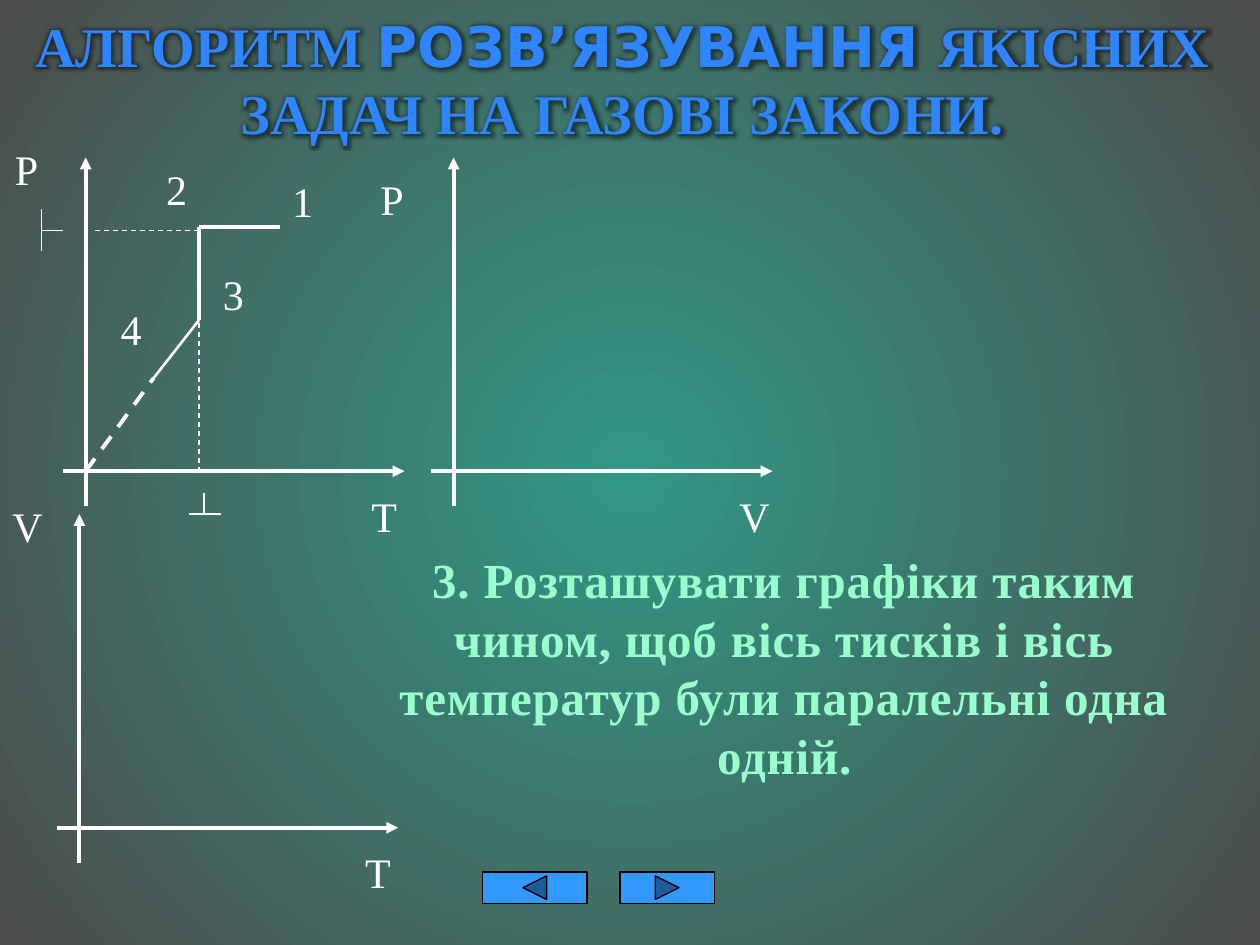
import pptx
import pptx.util
import pptx.dml.color
import pptx.enum.dml
import pptx.enum.shapes
import pptx.enum.text
import pptx.oxml
import pptx.oxml.ns
import lxml.etree

Inches = pptx.util.Inches
Pt = pptx.util.Pt
RGBColor = pptx.dml.color.RGBColor
SHAPE = pptx.enum.shapes.MSO_SHAPE
ALIGN = pptx.enum.text.PP_ALIGN
ANCHOR = pptx.enum.text.MSO_ANCHOR
DASH = pptx.enum.dml.MSO_LINE.DASH
qn = pptx.oxml.ns.qn

WHITE = RGBColor(0xFF, 0xFF, 0xFF)
BLACK = RGBColor(0, 0, 0)
TEAL = RGBColor(0x31, 0x98, 0x85)
GREY = RGBColor(0x4C, 0x4C, 0x4C)
BLUE = RGBColor(0x2F, 0x85, 0xFF)
MINT = RGBColor(0x99, 0xFF, 0xCC)
BUTTON = RGBColor(0x33, 0x99, 0xFF)
SERIF = "Times New Roman"
SANS = "DejaVu Sans"
NS = pptx.oxml.ns.nsdecls("a")


def style(run, size, color, bold=False, face=SERIF):
    font = run.font
    font.name = face
    font.size = Pt(size)
    font.bold = bold
    font.color.rgb = color


def paint(slide):
    fill = slide.background.fill
    fill.gradient()
    for stop, color in zip(fill.gradient_stops, (TEAL, GREY)):
        stop.color.rgb = color
    grad = slide.element.find(".//" + qn("a:gradFill"))
    grad.remove(grad.find(qn("a:lin")))
    grad.append(pptx.oxml.parse_xml(
        f'<a:path {NS} path="circle">'
        '<a:fillToRect l="50000" t="50000" r="50000" b="50000"/></a:path>'))


def line(slide, start, end, width, dash=False, arrow=False):
    link = slide.shapes.add_connector(
        pptx.enum.shapes.MSO_CONNECTOR.STRAIGHT,
        *(Inches(n) for n in (*start, *end)))
    link.line.color.rgb = WHITE
    link.line.width = Pt(width)
    if dash:
        link.line.dash_style = DASH.DASH
    if arrow:
        lxml.etree.SubElement(link.line._get_or_add_ln(),
                              qn("a:tailEnd"), type="triangle")
    lxml.etree.SubElement(link.element.spPr, qn("a:effectLst"))


def label(slide, text, left, top, width=0.5):
    box = slide.shapes.add_textbox(
        Inches(left), Inches(top), Inches(width), Inches(0.5))
    box.text_frame.word_wrap = True
    box.text_frame.text = text
    style(box.text_frame.paragraphs[0].runs[0], 24, WHITE)


def axes(slide, left, top, up, across, shift=-0.48, drop=-0.16):
    line(slide, (left + 0.18, top + 2.77), (left + 0.18, top), 2.25, arrow=True)
    line(slide, (left, top + 2.49), (left + 2.71, top + 2.49), 2.25, arrow=True)
    label(slide, up, left + shift, top + drop)
    label(slide, across, left + 2.35, top + 2.59)


def cycle(slide, left, top):
    lines = [
        ((1.08, 1.29), (1.08, 0.55), 2.25, False),
        ((1.08, 0.55), (1.72, 0.55), 2.25, False),
        ((0.18, 2.49), (0.72, 1.75), 2.25, True),
        ((0.72, 1.75), (1.08, 1.29), 1.5, False),
        ((1.08, 0.58), (0.25, 0.58), 0.75, True),
        ((1.08, 1.24), (1.08, 2.49), 0.75, True),
        ((1.12, 2.66), (1.12, 2.83), 0.75, False),
        ((1, 2.83), (1.25, 2.83), 0.75, False),
        ((-0.17, 0.41), (-0.17, 0.74), 0.75, False),
        ((-0.17, 0.58), (0, 0.58), 0.75, False),
    ]
    for start, end, width, dash in lines:
        line(slide, (left + start[0], top + start[1]),
             (left + end[0], top + end[1]), width, dash)
    points = [("1", 1.72, 0.09), ("2", 0.72, 0),
              ("3", 1.17, 0.83), ("4", 0.36, 1.11)]
    for text, x, y in points:
        label(slide, text, left + x, top + y)


def heading(slide, left, top, width, height):
    title = slide.shapes.title
    title.left, title.top = Inches(left), Inches(top)
    title.width, title.height = Inches(width), Inches(height)
    frame = title.text_frame
    frame.word_wrap = True
    frame.vertical_anchor = ANCHOR.TOP
    frame.auto_size = pptx.enum.text.MSO_AUTO_SIZE.NONE
    para = frame.paragraphs[0]
    para.alignment = ALIGN.CENTER
    parts = [("АЛГОРИТМ ", SERIF), ("РОЗВ’ЯЗУВАННЯ ", SANS),
             ("ЯКІСНИХ ЗАДАЧ НА ГАЗОВІ ЗАКОНИ.", SERIF)]
    for text, face in parts:
        run = para.add_run()
        run.text = text
        style(run, 32, BLUE, True, face)
        props = run.font._element
        props.find(qn("a:solidFill")).addnext(pptx.oxml.parse_xml(
            f'<a:effectLst {NS}><a:glow rad="63500"><a:srgbClr val="000000">'
            '<a:alpha val="50000"/></a:srgbClr></a:glow></a:effectLst>'))


def step(slide, left, top, width, height):
    box = slide.shapes.add_textbox(
        Inches(left), Inches(top), Inches(width), Inches(height))
    frame = box.text_frame
    frame.word_wrap = True
    frame.text = ("3. Розташувати графіки таким чином, щоб вісь тисків "
                  "і вісь температур були паралельні одна одній.")
    para = frame.paragraphs[0]
    para.alignment = ALIGN.CENTER
    style(para.runs[0], 28, MINT, True)
    para.runs[0].font._element.set("spc", "50")


def button(slide, kind, left, top, width, height):
    shape = slide.shapes.add_shape(
        kind, Inches(left), Inches(top), Inches(width), Inches(height))
    shape.shadow.inherit = False
    shape.fill.solid()
    shape.fill.fore_color.rgb = BUTTON
    shape.line.color.rgb = BLACK
    shape.line.width = Pt(0.75)


def main():
    deck = pptx.Presentation()
    deck.slide_width, deck.slide_height = Inches(10), Inches(7.5)
    slide = deck.slides.add_slide(deck.slide_layouts[5])
    paint(slide)
    cycle(slide, 0.5, 1.25)
    axes(slide, 0.5, 1.25, "P", "T")
    axes(slide, 3.42, 1.25, "P", "V", -0.5, 0.08)
    axes(slide, 0.45, 4.08, "V", "T", -0.45)
    step(slide, 2.68, 4.31, 7.09, 1.99)
    button(slide, SHAPE.ACTION_BUTTON_BACK_OR_PREVIOUS, 3.83, 6.92, 0.83, 0.25)
    button(slide, SHAPE.ACTION_BUTTON_FORWARD_OR_NEXT, 4.92, 6.92, 0.75, 0.25)
    heading(slide, 0, 0.04, 9.88, 1.18)
    deck.save("out.pptx")


if __name__ == "__main__":
    main()
